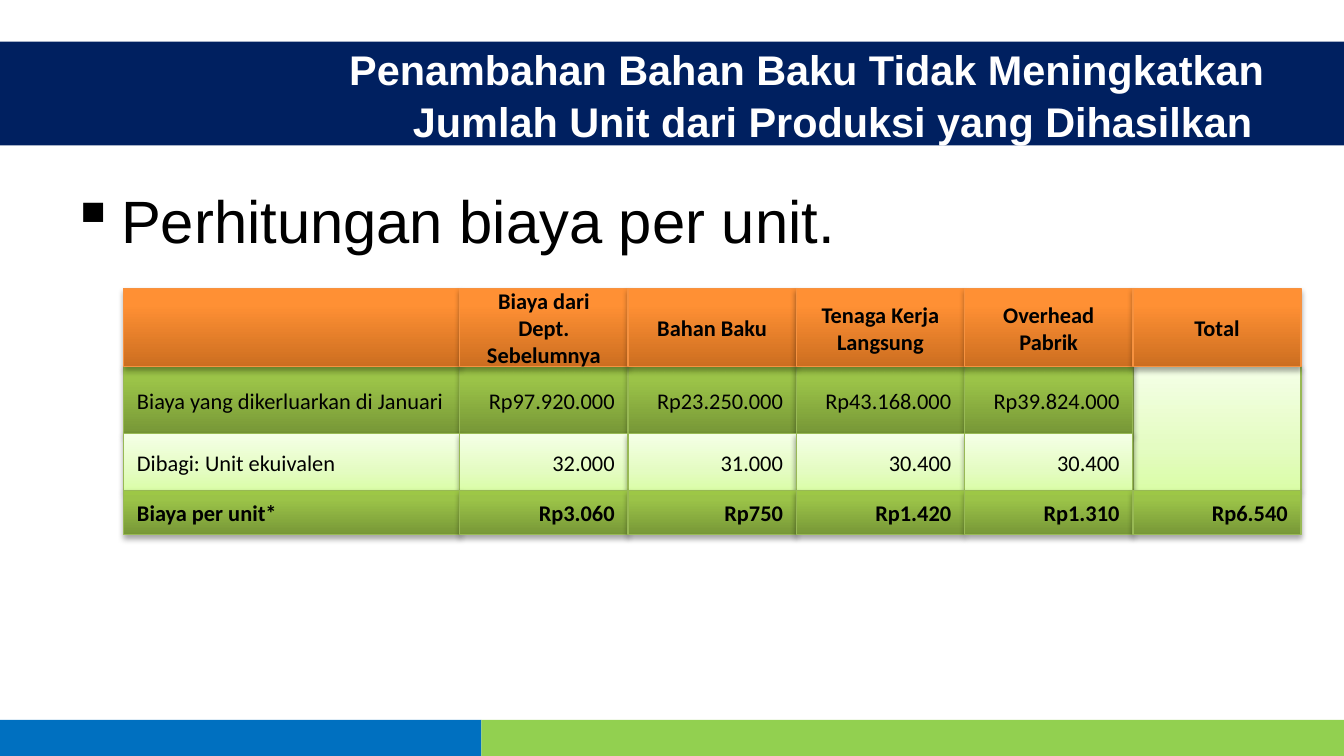
from copy import deepcopy
from dataclasses import dataclass

from lxml import etree
from pptx import Presentation
from pptx.dml.color import RGBColor
from pptx.enum.shapes import MSO_SHAPE
from pptx.enum.text import MSO_ANCHOR, MSO_AUTO_SIZE, PP_ALIGN
from pptx.oxml.ns import qn
from pptx.util import Cm, Pt

RECTANGLE = MSO_SHAPE.RECTANGLE
MIDDLE = MSO_ANCHOR.MIDDLE
NO_AUTOFIT = MSO_AUTO_SIZE.NONE
LEFT, CENTER, RIGHT = PP_ALIGN.LEFT, PP_ALIGN.CENTER, PP_ALIGN.RIGHT
TITLE_ONLY = 5


@dataclass(frozen=True)
class CellStyle:
    stops: tuple  # (position, colour), from bottom to top
    line: str
    shadow_opacity: int
    shadow_distance: float


class Theme:
    heading_font, table_font = "Arial", "Calibri"
    title_size, bullet_size, table_size = 22.2, 32, 12
    navy, blue, green = "002060", "0070C0", "92D050"
    white, black = "FFFFFF", "000000"
    orange_cell = CellStyle(
        ((0, "CC6E20"), (0.8, "FF9034"), (1, "FF9136")), "F69240", 35, 1.8)
    green_cell = CellStyle(
        ((0, "779737"), (0.8, "9BC348"), (1, "9DC746")), "98B955", 35, 1.8)
    pale_cell = CellStyle(
        ((0, "DAFDA7"), (0.35, "E4FCC2"), (1, "F5FFE7")), "98B955", 38, 1.6)


class SlideBuilder:
    def __init__(self, page, theme):
        self.page = page
        self.theme = theme

    def format_text(self, para, font, size, color, bold=False):
        for span in para.runs:
            span.font.name = font
            span.font.size = Pt(size)
            span.font.bold = bold
            span.font.color.rgb = RGBColor.from_string(color)

    def rectangle(self, left, top, width, height):
        box = self.page.shapes.add_shape(
            RECTANGLE, Cm(left), Cm(top), Cm(width), Cm(height))
        box.shadow.inherit = False
        return box

    def band(self, left, top, width, height, color):
        box = self.rectangle(left, top, width, height)
        box.fill.solid()
        box.fill.fore_color.rgb = RGBColor.from_string(color)
        box.line.fill.background()

    def title(self, text, left, top, width, height):
        box = self.page.shapes.title
        box.left, box.top, box.width, box.height = map(
            Cm, (left, top, width, height))
        self.page.shapes.element.append(box.element)  # in front of the band
        frame = box.text_frame
        frame.text = text
        frame.word_wrap = True
        frame.auto_size = NO_AUTOFIT
        frame.vertical_anchor = MIDDLE
        para = frame.paragraphs[0]
        para.alignment = RIGHT
        para.line_spacing = 1.05
        self.format_text(para, self.theme.heading_font, self.theme.title_size,
                         self.theme.white, bold=True)

    def bullet(self, text, left, top, width, height):
        box = self.page.shapes.add_textbox(
            Cm(left), Cm(top), Cm(width), Cm(height))
        frame = box.text_frame
        frame.word_wrap = True
        frame.text = text
        para = frame.paragraphs[0]
        props = para._p.get_or_add_pPr()
        props.set("marL", str(Cm(0.95)))
        props.set("indent", str(-Cm(0.95)))
        etree.SubElement(props, qn("a:buChar"), char="▪")
        self.format_text(para, self.theme.heading_font,
                         self.theme.bullet_size, self.theme.black)

    def cell(self, text, left, top, width, height, style, align, bold):
        box = self.rectangle(left, top, width, height)
        self.gradient(box, style.stops)
        box.line.color.rgb = RGBColor.from_string(style.line)
        box.line.width = Pt(0.75)
        self.shadow(box, style)
        if text:
            frame = box.text_frame
            frame.text = text
            frame.word_wrap = True
            frame.vertical_anchor = MIDDLE
            para = frame.paragraphs[0]
            para.alignment = align
            self.format_text(para, self.theme.table_font,
                             self.theme.table_size, self.theme.black, bold)

    def gradient(self, box, stops):
        box.fill.gradient()
        box.fill.gradient_angle = 90
        stop_list = box.element.spPr.find(".//" + qn("a:gsLst"))
        stop_list.append(deepcopy(stop_list[-1]))  # the default has two stops
        for stop, (position, color) in zip(box.fill.gradient_stops, stops):
            stop.position = position
            stop.color.rgb = RGBColor.from_string(color)

    def shadow(self, box, style):
        effects = box.element.spPr.find(qn("a:effectLst"))
        outer = etree.SubElement(
            effects, qn("a:outerShdw"), blurRad=str(Pt(3.1)),
            dist=str(Pt(style.shadow_distance)), dir="5400000",
            rotWithShape="0")
        color = etree.SubElement(outer, qn("a:srgbClr"), val=self.theme.black)
        etree.SubElement(color, qn("a:alpha"),
                         val=str(style.shadow_opacity * 1000))


def main():
    theme = Theme()
    deck = Presentation()
    deck.slide_width, deck.slide_height = Cm(25.4), Cm(14.29)
    page = deck.slides.add_slide(deck.slide_layouts[TITLE_ONLY])
    builder = SlideBuilder(page, theme)

    # Footer and title bands
    builder.band(0, 13.61, 9.1, 0.68, theme.blue)
    builder.band(9.1, 13.61, 16.3, 0.68, theme.green)
    builder.band(0, 0.79, 25.4, 1.96, theme.navy)

    # Title and bullet
    builder.title("Penambahan Bahan Baku Tidak Meningkatkan Jumlah Unit dari "
                  "Produksi yang Dihasilkan ", 4.22, 0.79, 19.94, 1.96)
    builder.bullet("Perhitungan biaya per unit.", 1.09, 3.35, 23.06, 1.8)

    # Cost grid: text, height, style, alignment of figures, bold
    rows = [
        (["", "Biaya dari Dept. Sebelumnya", "Bahan Baku",
          "Tenaga Kerja Langsung", "Overhead Pabrik", "Total"],
         1.47, theme.orange_cell, CENTER, True),
        (["Biaya yang dikerluarkan di Januari", "Rp97.920.000",
          "Rp23.250.000", "Rp43.168.000", "Rp39.824.000"],
         1.27, theme.green_cell, RIGHT, False),
        (["Dibagi: Unit ekuivalen", "32.000", "31.000", "30.400", "30.400"],
         1.07, theme.pale_cell, RIGHT, False),
        (["Biaya per unit*", "Rp3.060", "Rp750", "Rp1.420", "Rp1.310",
          "Rp6.540"],
         0.84, theme.green_cell, RIGHT, True),
    ]
    widths = [6.35] + [3.18] * 5
    lefts = [2.34 + sum(widths[:column]) for column in range(len(widths))]
    heights = [row[1] for row in rows]
    tops = [5.46 + sum(heights[:index]) for index in range(len(rows))]

    # Empty total cell beside the two middle rows
    builder.cell("", lefts[5], tops[1], widths[5], heights[1] + heights[2],
                 theme.pale_cell, RIGHT, False)

    # The header comes after the middle rows so that its shadow falls on them
    for index in (1, 2, 0, 3):
        texts, height, style, align, bold = rows[index]
        for column, text in enumerate(texts):
            builder.cell(text, lefts[column], tops[index], widths[column],
                         height, style, align if column else LEFT, bold)

    deck.save("out.pptx")


if __name__ == "__main__":
    main()
